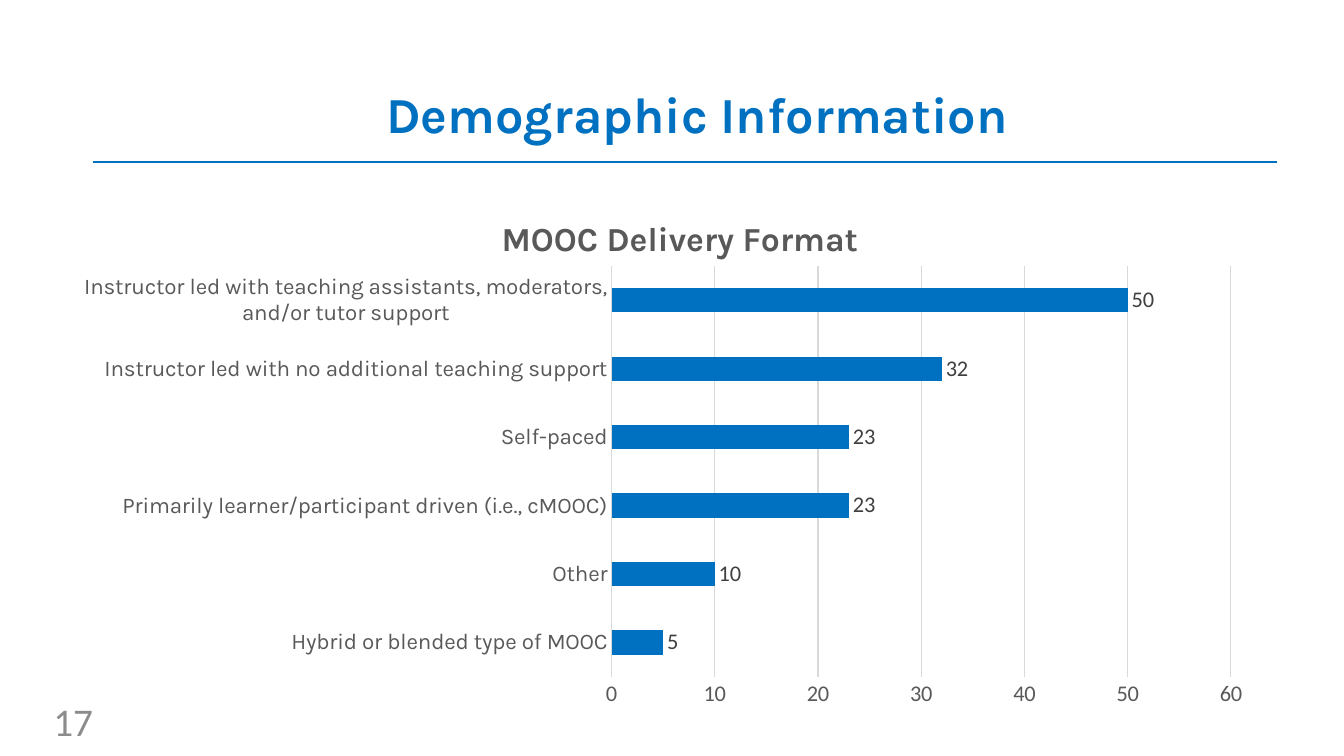
from lxml.etree import SubElement
from pptx import Presentation
from pptx.chart.data import CategoryChartData
from pptx.dml.color import RGBColor
from pptx.enum.chart import XL_CHART_TYPE, XL_LABEL_POSITION, XL_TICK_MARK
from pptx.enum.shapes import MSO_CONNECTOR
from pptx.enum.text import MSO_ANCHOR, PP_ALIGN
from pptx.oxml import parse_xml
from pptx.oxml.ns import nsdecls, qn
from pptx.util import Emu, Inches, Pt

BLUE = RGBColor(0x00, 0x70, 0xC0)
TEXT_GRAY = RGBColor(0x59, 0x59, 0x59)
LABEL_GRAY = RGBColor(0x40, 0x40, 0x40)
NUMBER_GRAY = RGBColor(0x8C, 0x8C, 0x8C)
GRID_GRAY = RGBColor(0xD9, 0xD9, 0xD9)
HEADING_FONT = "Karla"
NUMBER_FONT = "Calibri"

DELIVERY_FORMATS = {
    "Hybrid or blended type of MOOC": 5,
    "Other": 10,
    "Primarily learner/participant driven (i.e., cMOOC)": 23,
    "Self-paced": 23,
    "Instructor led with no additional teaching support": 32,
    "Instructor led with teaching assistants, moderators, and/or tutor support": 50,
}


def px(length):
    return Emu(round(length * 914400 / 100.8))


def style_font(font, size, name, color, bold=False):
    font.size = Pt(size)
    font.name = name
    font.color.rgb = color
    font.bold = bold


def write_text(frame, text, *, align=PP_ALIGN.CENTER, spacing=1.0, **style):
    para = frame.paragraphs[0]
    para.alignment = align
    para.line_spacing = spacing
    span = para.add_run()
    span.text = text
    style_font(span.font, **style)


def manual_layout(target=None, **fractions):
    layout = parse_xml(f"<c:layout {nsdecls('c')}><c:manualLayout/></c:layout>")
    manual = layout[0]
    if target:
        SubElement(manual, qn("c:layoutTarget")).set("val", target)
    for mode in ("xMode", "yMode"):
        SubElement(manual, qn(f"c:{mode}")).set("val", "edge")
    for key, value in fractions.items():
        SubElement(manual, qn(f"c:{key}")).set("val", str(value))
    return layout


class SlideBuilder:
    def __init__(self, page):
        self.page = page

    def text(self, text, left, top, width, height, **style):
        box = self.page.shapes.add_textbox(px(left), px(top), px(width), px(height))
        frame = box.text_frame
        frame.word_wrap = True
        frame.vertical_anchor = MSO_ANCHOR.MIDDLE
        write_text(frame, text, **style)

    def rule(self, left, right, y):
        line = self.page.shapes.add_connector(
            MSO_CONNECTOR.STRAIGHT, px(left), px(y), px(right), px(y)
        )
        line.line.color.rgb = BLUE
        line.line.width = Pt(2)
        SubElement(line.element.spPr, qn("a:effectLst"))

    def bar_chart(self, title, values, left, top, width, height):
        data = CategoryChartData(number_format="0")
        data.categories = list(values)
        data.add_series("Series 1", list(values.values()))
        chart = self.page.shapes.add_chart(
            XL_CHART_TYPE.BAR_CLUSTERED, px(left), px(top), px(width), px(height), data
        ).chart
        chart.has_legend = False
        style_font(chart.font, 16, NUMBER_FONT, TEXT_GRAY)
        self.chart_title(chart, title)
        self.axes(chart)
        self.bars(chart.plots[0])

    def chart_title(self, chart, title):
        chart.has_title = True
        heading = chart.chart_title
        write_text(
            heading.text_frame, title, size=24, name=HEADING_FONT, color=TEXT_GRAY, bold=True
        )
        heading.include_in_layout = False
        element = heading._element
        for layout in element.findall(qn("c:layout")):
            element.remove(layout)
        element.find(qn("c:tx")).addnext(manual_layout(x=0.35, y=0.04))
        area = chart._chartSpace.chart.plotArea
        for layout in area.findall(qn("c:layout")):
            area.remove(layout)
        area.insert(0, manual_layout("inner", x=0.448, y=0.144, w=0.523, h=0.778))

    def axes(self, chart):
        category, value = chart.category_axis, chart.value_axis
        for axis, font in ((category, HEADING_FONT), (value, NUMBER_FONT)):
            axis.major_tick_mark = XL_TICK_MARK.NONE
            axis.minor_tick_mark = XL_TICK_MARK.NONE
            style_font(axis.tick_labels.font, 16, font, TEXT_GRAY)
        value.minimum_scale = 0
        value.maximum_scale = 60
        value.major_unit = 10
        value.has_major_gridlines = True
        value.format.line.fill.background()
        for line in (category.format.line, value.major_gridlines.format.line):
            line.color.rgb = GRID_GRAY
            line.width = Pt(0.75)

    def bars(self, plot):
        plot.gap_width = 182
        plot.vary_by_categories = False
        fill = plot.series[0].format.fill
        fill.solid()
        fill.fore_color.rgb = BLUE
        plot.has_data_labels = True
        labels = plot.data_labels
        labels.show_value = True
        labels.position = XL_LABEL_POSITION.OUTSIDE_END
        labels.number_format = "0"
        labels.number_format_is_linked = False
        style_font(labels.font, 16, NUMBER_FONT, LABEL_GRAY)


def main():
    deck = Presentation()
    deck.slide_width = Inches(13.33)
    deck.slide_height = Inches(7.5)
    slide = SlideBuilder(deck.slides.add_slide(deck.slide_layouts[6]))
    slide.text(
        "Demographic Information", 71, 44, 1252, 146,
        size=36, name=HEADING_FONT, color=BLUE, bold=True, spacing=0.9,
    )
    slide.rule(93, 1277, 162)
    slide.text(
        "17", 0, 701, 103, 40,
        size=28, name=NUMBER_FONT, color=NUMBER_GRAY, align=PP_ALIGN.RIGHT,
    )
    slide.bar_chart("MOOC Delivery Format", DELIVERY_FORMATS, 81, 190, 1184, 528)
    deck.save("out.pptx")


if __name__ == "__main__":
    main()
